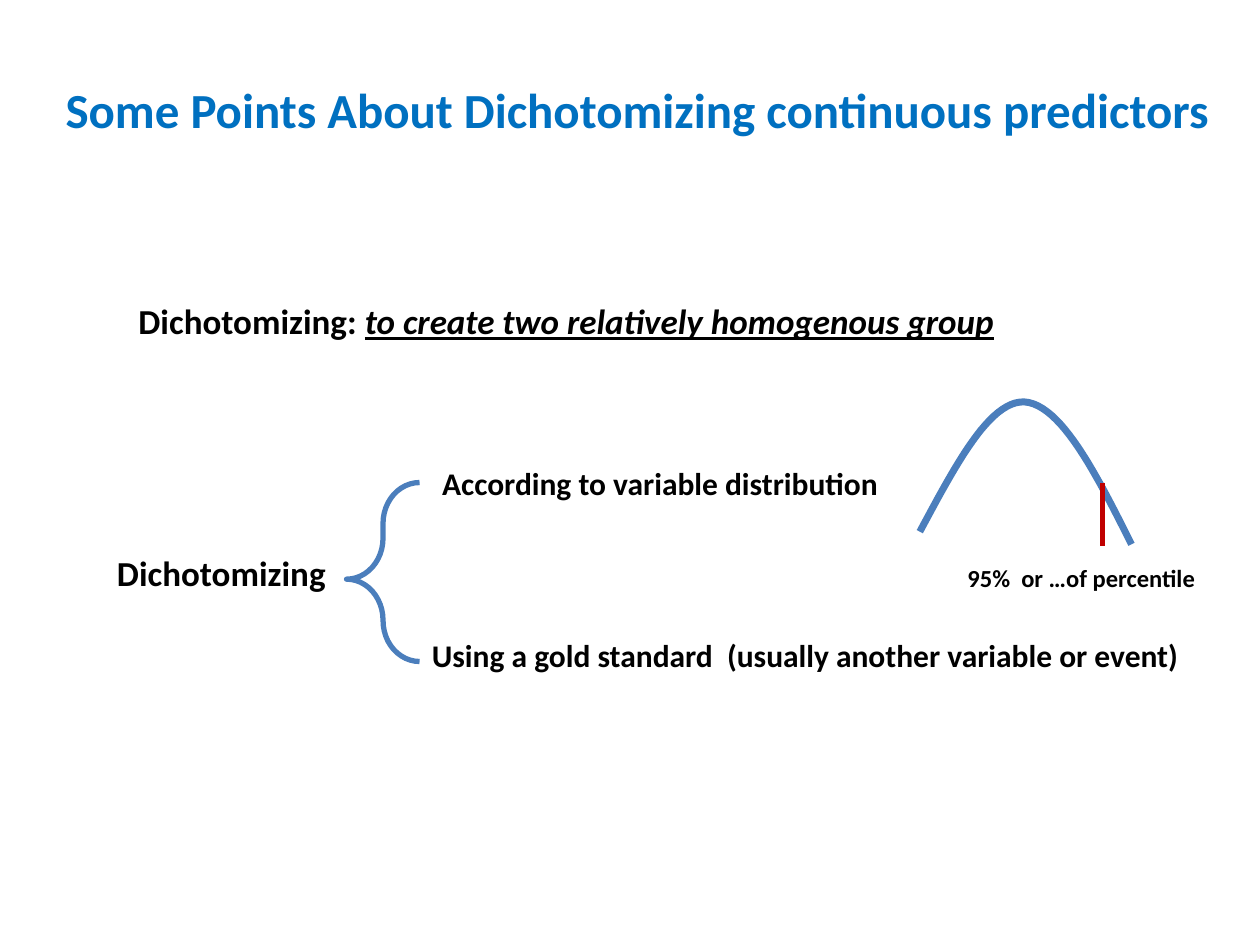
from lxml import etree
from pptx import Presentation, util as u
from pptx.dml.color import RGBColor
from pptx.enum import shapes as kinds, text
from pptx.oxml.ns import qn

FONT = "Calibri"
BLACK, TITLE_BLUE, LINE_BLUE, RED = "000000", "0070C0", "4B7EBC", "C00000"
STEPS = 24


def paint(color_format, hex_color):
    color_format.rgb = RGBColor.from_string(hex_color)


def style(paragraph, size, color=BLACK):
    paragraph.alignment = text.PP_ALIGN.LEFT
    paragraph.font.name = FONT
    paragraph.font.size = u.Pt(size)
    paragraph.font.bold = True
    paint(paragraph.font.color, color)


def stroke(line, color, width):
    paint(line.color, color)
    line.width = u.Pt(width)


def add_label(slide, words, left, top, width, height, size):
    label = slide.shapes.add_textbox(*map(u.Inches, (left, top, width, height)))
    label.text_frame.word_wrap = True
    paragraph = label.text_frame.paragraphs[0]
    paragraph.add_run().text = words
    style(paragraph, size)
    return paragraph


def add_heading(slide, left, top, width, height):
    heading = slide.shapes.title
    heading.left, heading.top, heading.width, heading.height = map(
        u.Inches, (left, top, width, height))
    frame = heading.text_frame
    frame.text = "Some Points About Dichotomizing continuous predictors"
    frame.word_wrap = True
    frame.auto_size = text.MSO_AUTO_SIZE.NONE
    frame.vertical_anchor = text.MSO_ANCHOR.TOP
    style(frame.paragraphs[0], 28, TITLE_BLUE)


def add_definition(slide, left, top, width, height):
    definition = add_label(slide, "Dichotomizing: ", left, top, width, height, 20)
    meaning = definition.add_run()
    meaning.text = "to create two relatively homogenous group"
    meaning.font.italic = True
    meaning.font.underline = True


def add_methods(slide, left, top, width, height):
    add_label(slide, "Dichotomizing", left, top + 0.7, 1.92, 0.44, 20)
    brace = slide.shapes.add_shape(
        kinds.MSO_SHAPE.LEFT_BRACE,
        *map(u.Inches, (left + 1.92, top + 0.2, 0.58, 1.42)))
    brace.adjustments[0], brace.adjustments[1] = 0.56, 0.54
    brace.shadow.inherit = False
    brace.fill.background()
    stroke(brace.line, LINE_BLUE, 3)
    add_label(slide, "According to variable distribution",
              left + 2.58, top, 3.75, 0.4, 18)
    add_label(slide, "Using a gold standard  (usually another variable or event)",
              left + 2.5, top + height - 0.4, width - 2.5, 0.4, 18)


def bezier(points, t):
    weights = ((1 - t) ** 3, 3 * t * (1 - t) ** 2, 3 * t ** 2 * (1 - t), t ** 3)
    return tuple(sum(w * p[axis] for w, p in zip(weights, points)) for axis in (0, 1))


def add_distribution(slide, left, top, width, height):
    start, peak, end = (0, 1.03), (0.83, 0), (1.68, 1.13)
    rise = (start, (0.28, 0.51), (0.55, -0.01), peak)
    fall = (peak, (1.12, 0.02), (1.4, 0.57), end)
    curve_points = [
        (u.Inches(left + x), u.Inches(top + y))
        for half in (rise, fall)
        for x, y in (bezier(half, step / STEPS) for step in range(1, STEPS + 1))]
    builder = slide.shapes.build_freeform(
        u.Inches(left + start[0]), u.Inches(top + start[1]))
    builder.add_line_segments(curve_points, close=False)
    curve = builder.convert_to_shape()
    curve.shadow.inherit = False
    curve.fill.background()
    stroke(curve.line, LINE_BLUE, 4)

    cutoff_x = left + 1.45
    cutoff = slide.shapes.add_connector(
        kinds.MSO_CONNECTOR.STRAIGHT,
        *map(u.Inches, (cutoff_x, top + 0.64, cutoff_x, top + 1.14)))
    stroke(cutoff.line, RED, 3)
    etree.SubElement(cutoff.element.spPr, qn("a:effectLst"))
    add_label(slide, "95%  or …of percentile",
              left + width - 2.08, top + height - 0.34, 2.08, 0.34, 14)


def main():
    deck = Presentation()
    deck.slide_width, deck.slide_height = u.Inches(10), u.Inches(7.5)
    slide = deck.slides.add_slide(deck.slide_layouts[5])
    add_heading(slide, 0.42, 0.58, 9.58, 1.04)
    add_methods(slide, 0.83, 3.63, 8.67, 1.77)
    add_definition(slide, 1, 2.33, 7.42, 0.44)
    add_distribution(slide, 7.3, 3.19, 2.36, 1.57)
    deck.save("out.pptx")


if __name__ == "__main__":
    main()
